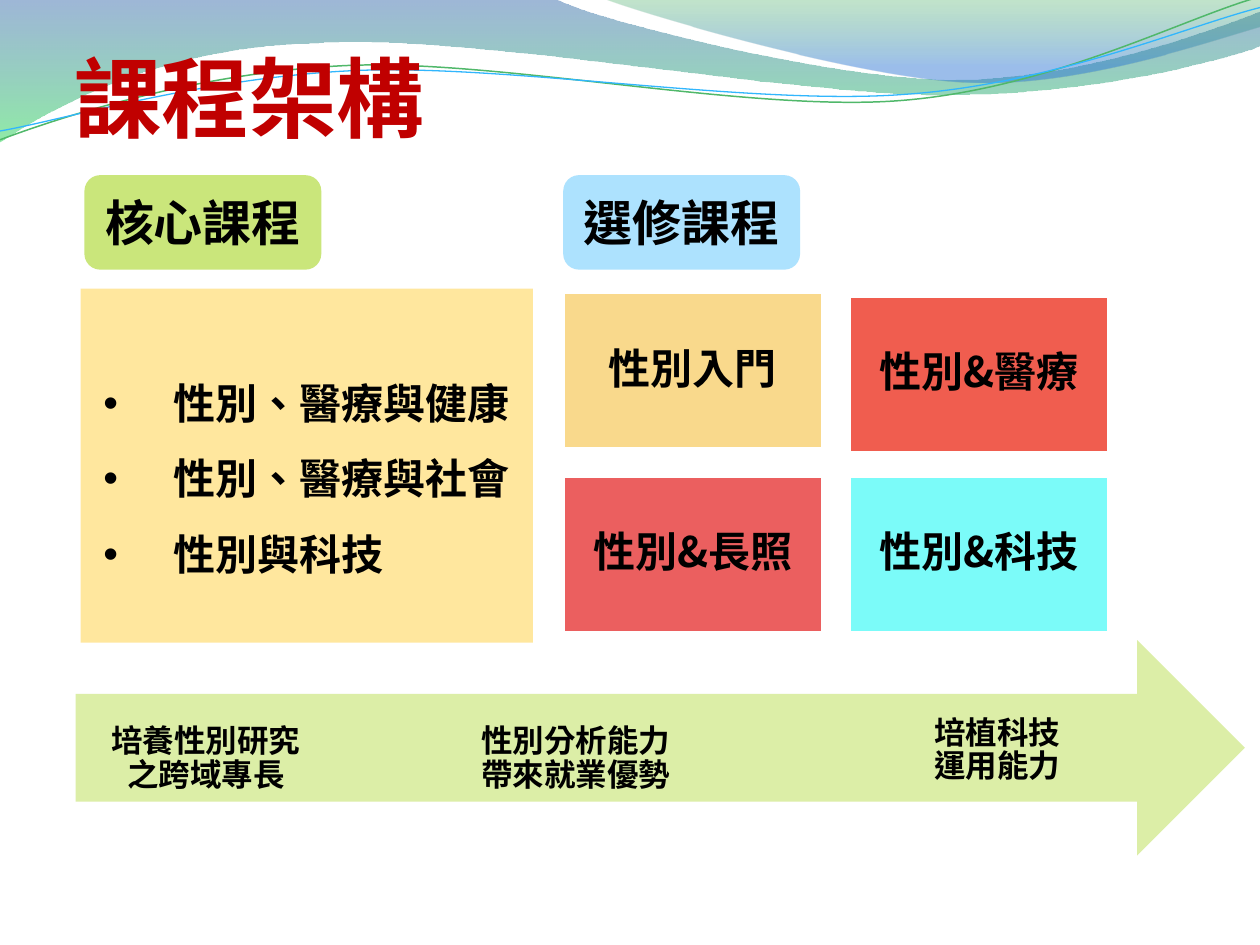
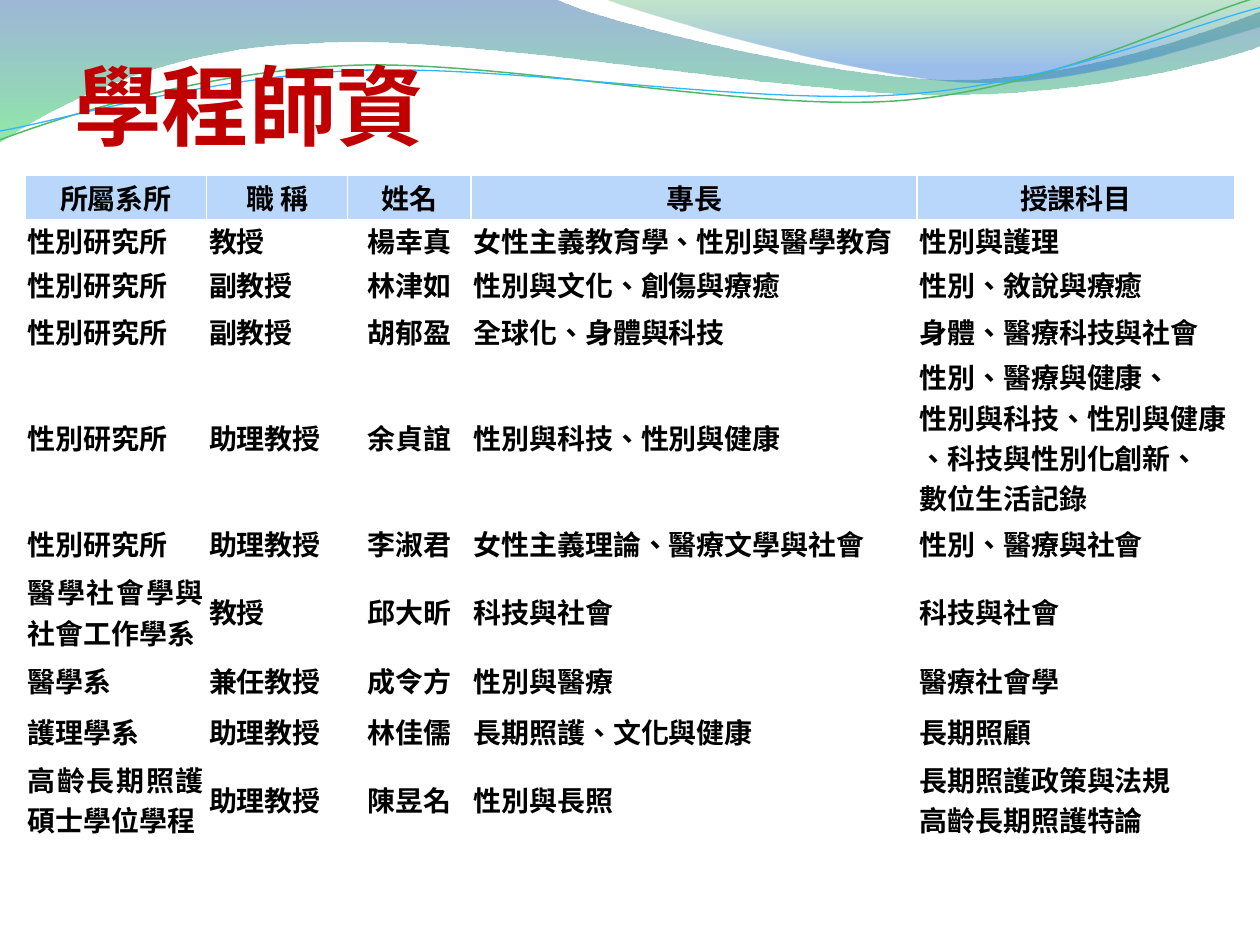
from dataclasses import dataclass
from typing import Any, NamedTuple

from lxml import etree
from pptx import Presentation
from pptx.dml.color import RGBColor
from pptx.enum.shapes import MSO_SHAPE
from pptx.enum.text import MSO_ANCHOR, MSO_AUTO_SIZE, PP_ALIGN
from pptx.oxml.ns import qn
from pptx.util import Pt

PX = 9144  # 100 px to the inch
RECT, PILL, ARROW = MSO_SHAPE.RECTANGLE, MSO_SHAPE.ROUNDED_RECTANGLE, MSO_SHAPE.RIGHT_ARROW
LEFT, CENTER, JUSTIFY = PP_ALIGN.LEFT, PP_ALIGN.CENTER, PP_ALIGN.JUSTIFY
MIDDLE, BOTTOM = MSO_ANCHOR.MIDDLE, MSO_ANCHOR.BOTTOM
NO_FIT = MSO_AUTO_SIZE.NONE


@dataclass(frozen=True)
class Theme:
    font: str = "Noto Sans CJK SC"
    heading_font: str = "DejaVu Sans"
    title: str = "C00000"
    ink: str = "000000"
    white: str = "FFFFFF"
    core: str = "CAE67B"
    elective: str = "ADE2FE"
    core_list: str = "FFDA66"
    arrow: str = "DCEEA7"
    header: str = "B9D6FB"
    title_pt: int = 50
    label_pt: int = 28
    body_pt: int = 24
    goal_pt: int = 18
    table_pt: int = 16


T = Theme()


class Box(NamedTuple):
    x: int
    y: int
    w: int
    h: int


class Stop(NamedTuple):
    position: float
    color: str
    alpha: int


class Wave(NamedTuple):
    start: tuple
    segments: list  # two numbers: line, six numbers: Bézier curve
    stops: tuple = ()
    line: str = ""
    width: float = 0


class Block(NamedTuple):
    kind: Any
    box: Box
    color: str
    alpha: int = 100
    text: str = ""
    size: int = 0
    spacing: float = 1.0
    outline: bool = False


class Goal(NamedTuple):
    box: Box
    text: str


WAVES = [
    Wave((0, 0), [(440, -1), (476, 17, 664, 63, 758, 63), (853, 63, 958, 26, 1000, 9),
                  (1001, 36), (983, 44, 870, 76, 746, 75), (622, 75, 382, 28, 257, 34),
                  (129, 36, 46, 83, -1, 113)],
         (Stop(0, "2960A7", 45), Stop(1, "35DA5E", 55))),
    Wave((479, -1), [(509, 11, 682, 62, 769, 65), (856, 69, 961, 32, 1000, 21), (1000, 0)],
         (Stop(0, "36A752", 30), Stop(0.8, "2472D3", 45))),
    Wave((0, 111), [(48, 93, 158, 57, 277, 52), (395, 47, 593, 89, 713, 80),
                    (833, 71, 938, 15, 998, -2)], line="50B86A", width=0.85),
    Wave((0, 104), [(47, 96, 164, 61, 283, 56), (403, 51, 597, 84, 717, 75),
                    (836, 67, 941, 21, 1000, 6)], line="31B6FD", width=0.75),
]

BLOCKS = [
    Block(ARROW, Box(60, 508, 928, 171), T.arrow),
    Block(PILL, Box(67, 139, 188, 75), T.core, 100, "核心課程", T.label_pt),
    Block(PILL, Box(447, 139, 188, 75), T.elective, 100, "選修課程", T.label_pt),
] + [
    Block(RECT, Box(x, y, 206, 124), color, alpha, text, T.body_pt, 0.9, True)
    for x, y, color, alpha, text in [
        (447, 232, "F9D98C", 100, "性別入門"), (674, 235, "EE4333", 86, "性別&醫療"),
        (447, 378, "E52828", 74, "性別&長照"), (674, 378, "5AFBF8", 80, "性別&科技")]
]
CORE_COURSES = ["性別、醫療與健康", "性別、醫療與社會", "性別與科技"]
GOALS = [
    Goal(Box(87, 510, 153, 185), "培養性別研究之跨域專長"),
    Goal(Box(373, 510, 168, 185), "性別分析能力帶來就業優勢"),
    Goal(Box(730, 503, 123, 185), "培植科技運用能力"),
]

COLUMNS = [144, 112, 98, 354, 252]
ROWS = [35, 34, 35, 40, 69, 40, 69, 40, 40, 69]
CENTERED_COLUMN = 2
INSTITUTE = "性別研究所"
FACULTY = [
    ("所屬系所", "職 稱", "姓名", "專長", "授課科目"),
    (INSTITUTE, "教授", "楊幸真", "女性主義教育學、性別與醫學教育", "性別與護理"),
    (INSTITUTE, "副教授", "林津如", "性別與文化、創傷與療癒", "性別、敘說與療癒"),
    (INSTITUTE, "副教授", "胡郁盈", "全球化、身體與科技", "身體、醫療科技與社會"),
    (INSTITUTE, "助理教授", "余貞誼", "性別與科技、性別與健康",
     "性別、醫療與健康、\n性別與科技、性別與健康\n、科技與性別化創新、\n數位生活記錄"),
    (INSTITUTE, "助理教授", "李淑君", "女性主義理論、醫療文學與社會", "性別、醫療與社會"),
    ("醫學社會學與社會工作學系", "教授", "邱大昕", "科技與社會", "科技與社會"),
    ("醫學系", "兼任教授", "成令方", "性別與醫療", "醫療社會學"),
    ("護理學系", "助理教授", "林佳儒", "長期照護、文化與健康", "長期照顧"),
    ("高齡長期照護碩士學位學程", "助理教授", "陳昱名", "性別與長照",
     "長期照護政策與法規\n高齡長期照護特論"),
]


def rgb(color: str) -> RGBColor:
    return RGBColor.from_string(color)


def assign(obj: Any, values: dict) -> None:
    for name, value in values.items():
        setattr(obj, name, value)


def emu(box: Box) -> list[int]:
    return [v * PX for v in box]


def place(sp: Any, box: Box) -> None:
    assign(sp, dict(zip(("left", "top", "width", "height"), emu(box))))


def margins(left: int, top: int, right: int, bottom: int) -> dict:
    return {"margin_left": left * PX, "margin_top": top * PX,
            "margin_right": right * PX, "margin_bottom": bottom * PX}


def set_alpha(color_element: Any, percent: int) -> None:
    if percent < 100:
        etree.SubElement(color_element, qn("a:alpha")).set("val", str(percent * 1000))


def fill_solid(sp: Any, color: str, alpha: int = 100) -> None:
    sp.fill.solid()
    sp.fill.fore_color.rgb = rgb(color)
    set_alpha(sp.element.xpath("./p:spPr/a:solidFill/a:srgbClr")[0], alpha)


def write(tf: Any, lines: list[str], size: int, align: Any, color: str = T.ink,
          font: str = T.font, **paragraph_format: Any) -> None:
    for i, line in enumerate(lines):
        p = tf.paragraphs[0] if i == 0 else tf.add_paragraph()
        assign(p, {"alignment": align, **paragraph_format})
        r = p.add_run()
        r.text = line
        assign(r.font, {"name": font, "size": Pt(size), "bold": True})
        r.font.color.rgb = rgb(color)
        rPr = r._r.get_or_add_rPr()
        rPr.set("lang", "zh-TW")
        etree.SubElement(rPr, qn("a:ea")).set("typeface", T.font)


def bend_segments(sp: Any, segments: list) -> None:
    # Turn the straight sides that have control points into Bézier curves
    for side, segment in zip(sp.element.xpath(".//a:lnTo"), segments):
        if len(segment) == 6:
            curve = etree.Element(qn("a:cubicBezTo"))
            for x, y in zip(segment[::2], segment[1::2]):
                etree.SubElement(curve, qn("a:pt"), x=str(x * PX - sp.left),
                                 y=str(y * PX - sp.top))
            side.getparent().replace(side, curve)


def draw_wave(s: Any, wave: Wave) -> Any:
    x, y = wave.start
    builder = s.shapes.build_freeform(x, y, scale=PX)
    builder.add_line_segments([segment[-2:] for segment in wave.segments],
                              close=bool(wave.stops))
    sp = builder.convert_to_shape()
    outline = sp.element.xpath(".//a:path")[0]
    outline.set("w", str(sp.width))
    outline.set("h", str(sp.height))
    for pt in outline.xpath(".//a:pt"):
        for axis in ("x", "y"):
            pt.set(axis, str(int(pt.get(axis)) * PX))
    bend_segments(sp, wave.segments)
    sp.shadow.inherit = False
    if wave.stops:
        sp.line.fill.background()
        sp.fill.gradient()
        sp.fill.gradient_angle = 270
        for target, stop in zip(sp.fill.gradient_stops, wave.stops):
            target.position = stop.position
            target.color.rgb = rgb(stop.color)
        for element, stop in zip(sp.element.xpath(".//a:gs/a:srgbClr"), wave.stops):
            set_alpha(element, stop.alpha)
    else:
        sp.fill.background()
        sp.line.color.rgb = rgb(wave.line)
        sp.line.width = Pt(wave.width)
    return sp


def add_waves_to_master(prs: Any, s: Any) -> None:
    # Freeforms are built on a slide, then moved behind the master's placeholders
    tree = prs.slide_master.shapes.element
    for i, wave in enumerate(WAVES):
        element = draw_wave(s, wave).element
        element.xpath(".//p:cNvPr")[0].set("id", str(100 + i))
        tree.insert(2 + i, element)


def set_title(s: Any, text: str, box: Box) -> None:
    place(s.shapes.title, box)
    tf = s.shapes.title.text_frame
    assign(tf, {"vertical_anchor": BOTTOM, "word_wrap": True, "auto_size": NO_FIT,
                **margins(0, 5, 0, 0)})
    write(tf, [text], T.title_pt, LEFT, T.title, T.heading_font)


def draw_block(s: Any, block: Block) -> None:
    sp = s.shapes.add_shape(block.kind, *emu(block.box))
    sp.shadow.inherit = False
    fill_solid(sp, block.color, block.alpha)
    if block.outline:
        sp.line.color.rgb = rgb(T.white)
        sp.line.width = Pt(2)
    else:
        sp.line.fill.background()
    if block.text:
        assign(sp.text_frame, {"vertical_anchor": MIDDLE, "word_wrap": True})
        write(sp.text_frame, [block.text], block.size, CENTER, line_spacing=block.spacing)


def draw_goal(s: Any, goal: Goal) -> None:
    tf = s.shapes.add_textbox(*emu(goal.box)).text_frame
    assign(tf, {"vertical_anchor": MIDDLE, "word_wrap": True, **margins(0, 22, 0, 22)})
    write(tf, [goal.text], T.goal_pt, CENTER, line_spacing=Pt(19.4))


def fill_core_list(sp: Any) -> None:
    place(sp, Box(64, 229, 359, 281))
    fill_solid(sp, T.core_list, 63)
    tf = sp.text_frame
    assign(tf, {"vertical_anchor": MIDDLE, "word_wrap": True, "auto_size": NO_FIT,
                **margins(18, 5, 5, 5)})
    write(tf, CORE_COURSES, T.body_pt, LEFT, line_spacing=Pt(43.2), space_before=Pt(0))
    for pPr in sp.element.xpath(".//a:pPr"):
        pPr.set("marL", str(56 * PX))
        pPr.set("indent", str(-56 * PX))


def add_borders(cell: Any) -> None:
    tcPr = cell._tc.get_or_add_tcPr()
    for i, side in enumerate(("lnL", "lnR", "lnT", "lnB")):
        ln = etree.Element(qn(f"a:{side}"), w=str(Pt(1)))
        solid = etree.SubElement(ln, qn("a:solidFill"))
        etree.SubElement(solid, qn("a:srgbClr")).set("val", T.white)
        tcPr.insert(i, ln)


def draw_faculty_table(s: Any) -> None:
    box = Box(20, 139, sum(COLUMNS), sum(ROWS))
    table = s.shapes.add_table(len(ROWS), len(COLUMNS), *emu(box)).table
    assign(table, {"first_row": False, "horz_banding": False})
    for column, width in zip(table.columns, COLUMNS):
        column.width = width * PX
    for i, (height, texts) in enumerate(zip(ROWS, FACULTY)):
        table.rows[i].height = height * PX
        for j, text in enumerate(texts):
            cell = table.cell(i, j)
            assign(cell, {"vertical_anchor": MIDDLE, **margins(2, 0, 2, 0)})
            if i == 0:
                cell.fill.solid()
                cell.fill.fore_color.rgb = rgb(T.header)
            else:
                cell.fill.background()
            add_borders(cell)
            align = CENTER if i == 0 or j == CENTERED_COLUMN else JUSTIFY
            write(cell.text_frame, text.split("\n"), T.table_pt, align, font=T.heading_font)


def main() -> None:
    prs = Presentation()
    prs.slide_width, prs.slide_height = 1000 * PX, 750 * PX

    # Course structure
    s = prs.slides.add_slide(prs.slide_layouts[1])
    add_waves_to_master(prs, s)
    set_title(s, "課程架構", Box(59, 5, 900, 113))
    fill_core_list(s.placeholders[1])
    for block in BLOCKS:
        draw_block(s, block)
    for goal in GOALS:
        draw_goal(s, goal)

    # Faculty
    s = prs.slides.add_slide(prs.slide_layouts[5])
    set_title(s, "學程師資", Box(59, 0, 900, 125))
    draw_faculty_table(s)

    prs.save("out.pptx")


if __name__ == "__main__":
    main()
